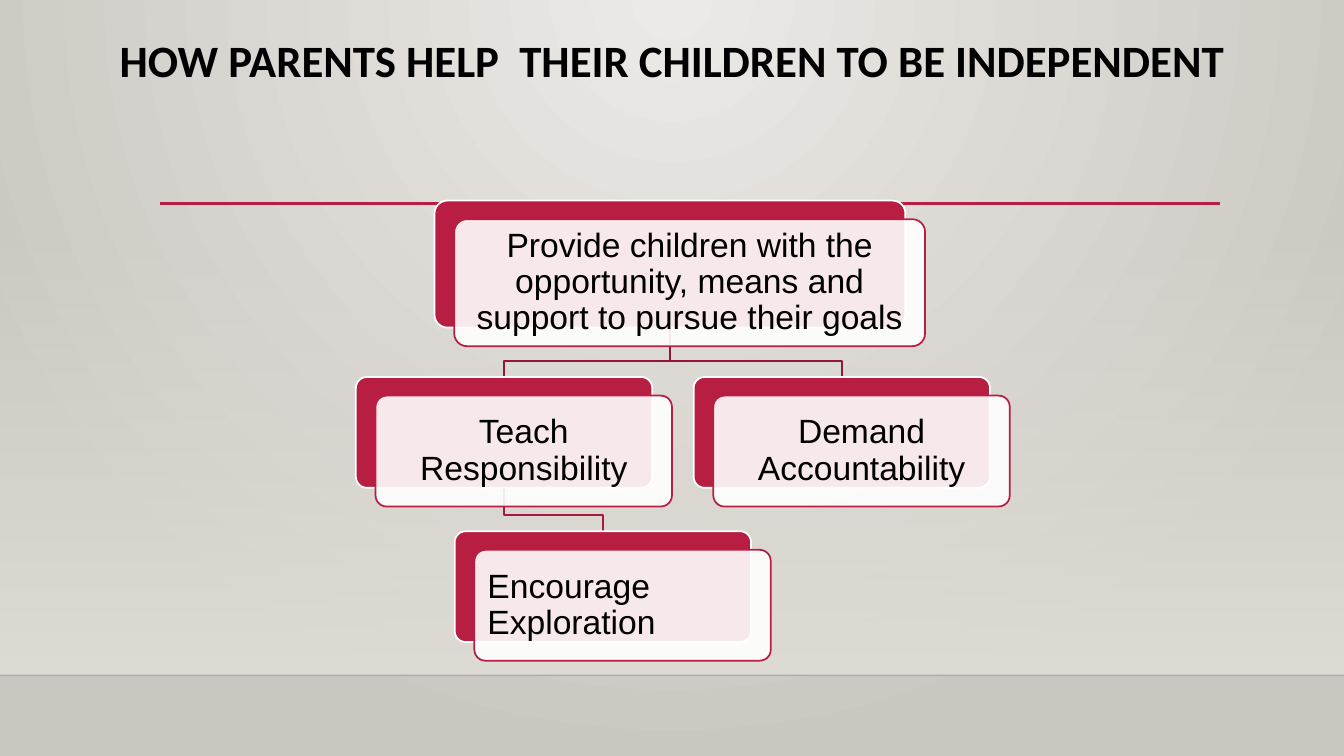
from lxml import etree
from pptx import Presentation
from pptx.dml.color import RGBColor
from pptx.enum.shapes import MSO_CONNECTOR, MSO_SHAPE
from pptx.enum.text import MSO_ANCHOR, PP_ALIGN
from pptx.oxml.ns import qn
from pptx.util import Inches, Pt

COLORS = {
    "light": "ECEAE7", "dark": "CAC7C1", "haze": "DFDBD5",
    "crimson": "B71E42", "branch": "931835", "twig": "A61B3C",
    "white": "FFFFFF", "black": "000000", "floor": "000001",
}
OFFSET_X, OFFSET_Y, BEND = 0.195, 0.185, 0.16


def color(name):
    return RGBColor.from_string(COLORS[name])


def set_alpha(element, percent):
    shade = next(element.iter(qn("a:srgbClr")))
    etree.SubElement(shade, qn("a:alpha"), val=str(percent * 1000))


deck = Presentation()
deck.slide_width, deck.slide_height = Inches(13.33), Inches(7.5)
page = deck.slides.add_slide(deck.slide_layouts[6])

backdrop = page.background.fill
backdrop.gradient()
for stop, name, position in zip(backdrop.gradient_stops, ("light", "dark"), (0, 1)):
    stop.color.rgb = color(name)
    stop.position = position
gradient = next(page.background._cSld.iter(qn("a:gradFill")))
gradient.remove(gradient.find(qn("a:lin")))
radial = etree.SubElement(gradient, qn("a:path"))
radial.set("path", "circle")
etree.SubElement(radial, qn("a:fillToRect"), l="43000", t="0", r="43000", b="100000")

haze = page.shapes.add_shape(
    MSO_SHAPE.RECTANGLE, 0, Inches(2.21), Inches(13.33), Inches(4.49))
haze.shadow.inherit = False
haze.line.fill.background()
haze.fill.gradient()
haze.fill.gradient_angle = 270
for stop, position in zip(haze.fill.gradient_stops, (0, 1)):
    stop.color.rgb = color("haze")
    stop.position = position
set_alpha(haze._element.spPr, 0)

rules = [(0, 13.33, 6.7, "floor", 1, 20), (1.59, 12.1, 2.02, "crimson", 2.5, 100)]
for left, right, top, name, width, opacity in rules:
    rule = page.shapes.add_connector(
        MSO_CONNECTOR.STRAIGHT, Inches(left), Inches(top), Inches(right), Inches(top))
    rule.line.color.rgb = color(name)
    rule.line.width = Pt(width)
    if opacity < 100:
        set_alpha(rule._element.spPr, opacity)
    etree.SubElement(rule._element.spPr, qn("a:effectLst"))

title = page.shapes.add_textbox(Inches(0.92), Inches(0.34), Inches(11.5), Inches(1.45))
title.text_frame.word_wrap = True
para = title.text_frame.paragraphs[0]
para.text = "HOW PARENTS HELP  THEIR CHILDREN TO BE INDEPENDENT"
para.alignment = PP_ALIGN.CENTER
para.line_spacing = 0.9
for key, value in {"name": "Calibri", "size": Pt(32), "bold": True}.items():
    setattr(para.font, key, value)
para.font.color.rgb = color("black")

cards = {
    "goals": (4.31, 1.99, 4.67, 1.26, PP_ALIGN.CENTER,
              "Provide children with the opportunity, means and support to pursue their goals"),
    "teach": (3.53, 3.74, 2.94, 1.1, PP_ALIGN.CENTER, "Teach Responsibility"),
    "explore": (4.51, 5.27, 2.94, 1.1, PP_ALIGN.LEFT, "Encourage Exploration"),
    "demand": (6.88, 3.74, 2.94, 1.1, PP_ALIGN.CENTER, "Demand Accountability"),
}
branches = [("goals", "demand", "branch"), ("teach", "explore", "twig"),
            ("goals", "teach", "branch")]

for parent, child, name in branches:
    left, top, width, height = cards[parent][:4]
    start_x, start_y = left + width / 2, top + height
    left, end_y, width = cards[child][:3]
    end_x, bend_y = left + width / 2, end_y - BEND
    builder = page.shapes.build_freeform(Inches(start_x), Inches(start_y))
    corners = [(start_x, bend_y), (end_x, bend_y), (end_x, end_y)]
    builder.add_line_segments([(Inches(x), Inches(y)) for x, y in corners], close=False)
    branch = builder.convert_to_shape()
    branch.shadow.inherit = False
    branch.fill.background()
    branch.line.color.rgb = color(name)
    branch.line.width = Pt(1.25)

for left, top, width, height, alignment, wording in cards.values():
    for step, fill, line in ((0, "crimson", "white"), (1, "white", "crimson")):
        box = page.shapes.add_shape(
            MSO_SHAPE.ROUNDED_RECTANGLE, Inches(left + step * OFFSET_X),
            Inches(top + step * OFFSET_Y), Inches(width), Inches(height))
        box.adjustments[0] = 0.1
        box.shadow.inherit = False
        box.fill.solid()
        box.fill.fore_color.rgb = color(fill)
        box.line.color.rgb = color(line)
        box.line.width = Pt(1.25)
    set_alpha(box._element.spPr, 90)
    frame = box.text_frame
    frame.word_wrap = True
    frame.vertical_anchor = MSO_ANCHOR.MIDDLE
    for side in ("left", "top", "right", "bottom"):
        setattr(frame, f"margin_{side}", Inches(0.1))
    para = frame.paragraphs[0]
    para.text = wording
    para.alignment = alignment
    para.line_spacing = 0.9
    for key, value in {"name": "Arial", "size": Pt(24)}.items():
        setattr(para.font, key, value)
    para.font.color.rgb = color("black")

deck.save("out.pptx")
